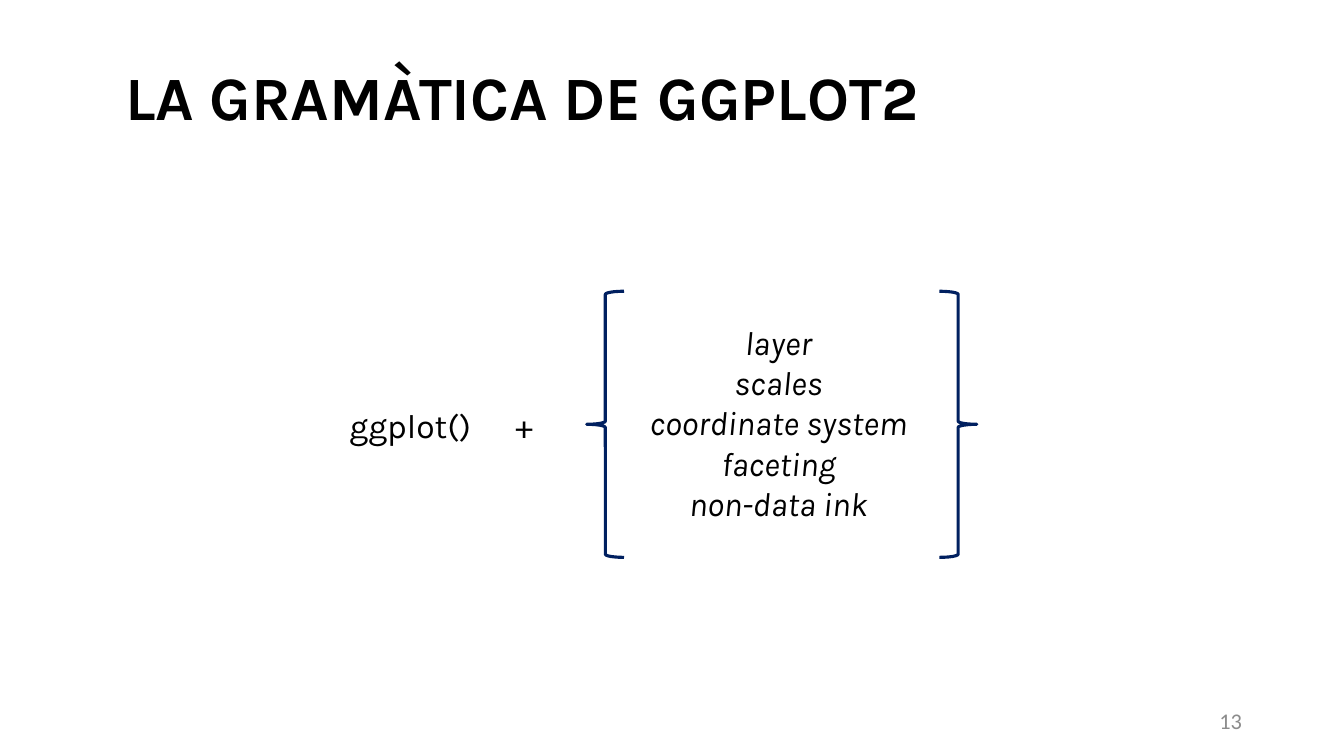
from pptx import Presentation
from pptx.dml.color import RGBColor
from pptx.enum.shapes import MSO_SHAPE as Shape
from pptx.enum.text import MSO_ANCHOR as Anchor, MSO_AUTO_SIZE as AutoSize, PP_ALIGN as Align
from pptx.util import Inches, Pt

WIDTH, HEIGHT = Inches(13.33), Inches(7.5)
BLACK = RGBColor(0x00, 0x00, 0x00)
GREY = RGBColor(0x8C, 0x8C, 0x8C)
NAVY = RGBColor(0x00, 0x20, 0x60)
COMPONENTS = ["layer", "scales", "coordinate system", "faceting", "non-data ink"]
BRACE_TOP, BRACE_WIDTH, BRACE_HEIGHT = 38.53, 2.78, 35.2


def area(left, top, width, height):
    """Turn percentages of the slide's size into lengths."""
    return (int(WIDTH * left / 100), int(HEIGHT * top / 100),
            int(WIDTH * width / 100), int(HEIGHT * height / 100))


def write(box, lines, size, name="Karla", color=BLACK, align=Align.CENTER,
          anchor=Anchor.MIDDLE, bold=False, italic=False):
    """Fill a box with one formatted paragraph per line."""
    frame = box.text_frame
    frame.text = "\n".join(lines)
    frame.word_wrap = True
    frame.auto_size = AutoSize.NONE
    frame.vertical_anchor = anchor
    for para in frame.paragraphs:
        para.alignment = align
        font = para.font
        font.name, font.size, font.bold, font.italic = name, Pt(size), bold, italic
        font.color.rgb = color


def add_title(page, text):
    """Place and format the title placeholder."""
    title = page.shapes.title
    title.left, title.top, title.width, title.height = area(8.55, 8.27, 82.73, 9.47)
    write(title, [text], 44, align=Align.LEFT, anchor=Anchor.TOP, bold=True)
    title.text_frame.paragraphs[0].line_spacing = 0.9


def add_text(page, place, lines, size=24, **style):
    """Add a text box at a place given in percentages."""
    write(page.shapes.add_textbox(*area(*place)), lines, size, **style)


def add_brace(page, kind, left):
    """Add one outlined brace beside the list of components."""
    brace = page.shapes.add_shape(kind, *area(left, BRACE_TOP, BRACE_WIDTH, BRACE_HEIGHT))
    brace.shadow.inherit = False
    brace.fill.background()
    brace.line.color.rgb = NAVY
    brace.line.width = Pt(2.25)


def main():
    """Build the slide and save the deck."""
    deck = Presentation()
    deck.slide_width, deck.slide_height = WIDTH, HEIGHT
    page = deck.slides.add_slide(deck.slide_layouts[5])
    add_title(page, "LA GRAMÀTICA DE GGPLOT2")
    add_text(page, (22.53, 50.13, 16, 12.27), ["ggplot()"])
    add_text(page, (36, 50.13, 6, 12.27), ["+"])
    add_text(page, (37.91, 36.4, 40, 38.93), COMPONENTS, italic=True)
    add_brace(page, Shape.LEFT_BRACE, 43.65)
    add_brace(page, Shape.RIGHT_BRACE, 69.9)
    add_text(page, (70.65, 92.67, 22.5, 5.33), ["13"], 16,
             name="Calibri", color=GREY, align=Align.RIGHT)
    deck.save("out.pptx")


if __name__ == "__main__":
    main()
